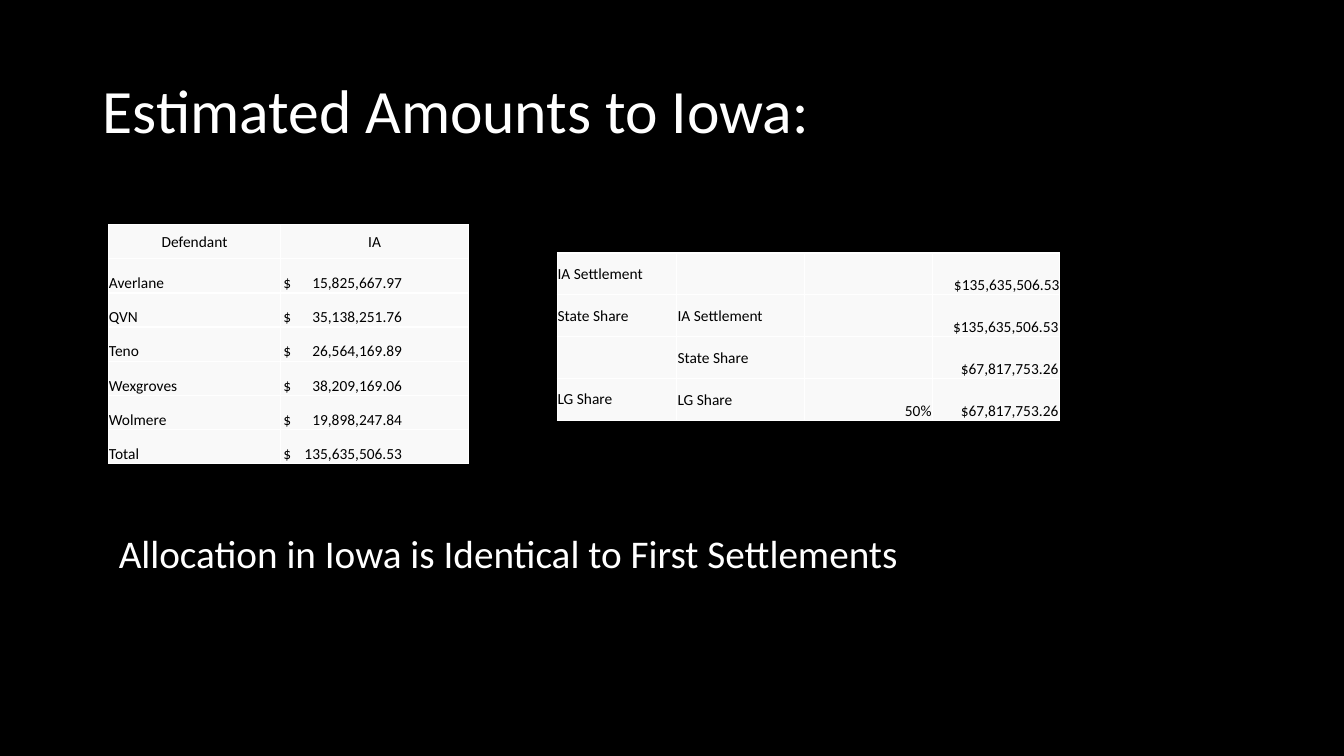
import pptx
import pptx.dml.color
import pptx.enum.text
import pptx.oxml
import pptx.oxml.ns
import pptx.util

Inches = pptx.util.Inches
ALIGN = pptx.enum.text.PP_ALIGN
ANCHOR = pptx.enum.text.MSO_ANCHOR
FONT, WHITE, BLACK, CELL = "Calibri", "FFFFFF", "000000", "F9F9F9"
NS = pptx.oxml.ns.nsdecls("a")

DEFENDANTS = [
    ("Defendant", "IA"),
    ("Averlane", "$\t15,825,667.97"),
    ("QVN", "$\t35,138,251.76"),
    ("Teno", "$\t26,564,169.89"),
    ("Wexgroves", "$\t38,209,169.06"),
    ("Wolmere", "$\t19,898,247.84"),
    ("Total", "$\t135,635,506.53"),
]
SHARES = [
    ("IA Settlement", "", "", "$135,635,506.53"),
    ("State Share", "IA Settlement", "", "$135,635,506.53"),
    ("", "State Share", "", "$67,817,753.26"),
    ("LG Share", "LG Share", "50%", "$67,817,753.26"),
]


def rgb(color):
    """Turn a hex string into a colour."""
    return pptx.dml.color.RGBColor.from_string(color)


def style_text(tf, size, color):
    """Format every run of a text frame."""
    for p in tf.paragraphs:
        for r in p.runs:
            r.font.name = FONT
            r.font.size = pptx.util.Pt(size)
            r.font.color.rgb = rgb(color)


def add_text(slide, box, text, size, anchor=ANCHOR.TOP, spacing=1.0):
    """Place one line of white text in a box."""
    tf = slide.shapes.add_textbox(*map(Inches, box)).text_frame
    tf.word_wrap = True
    tf.vertical_anchor = anchor
    tf.text = text
    tf.paragraphs[0].line_spacing = spacing
    style_text(tf, size, WHITE)


def add_borders(cell):
    """Draw thin white lines around a cell, ahead of its fill."""
    tc_pr = cell._tc.get_or_add_tcPr()
    for i, side in enumerate(("lnL", "lnR", "lnT", "lnB")):
        tc_pr.insert(i, pptx.oxml.parse_xml(
            f'<a:{side} {NS} w="12700"><a:solidFill><a:srgbClr val="{WHITE}"/>'
            f'</a:solidFill></a:{side}>'))


def add_grid(slide, box, widths, rows):
    """Fill a box with a plain table of equal rows and return the table."""
    left, top, width, height = map(Inches, box)
    table = slide.shapes.add_table(
        len(rows), len(widths), left, top, width, height).table
    table.first_row = table.horz_banding = False
    for column, w in zip(table.columns, widths):
        column.width = Inches(w)
    for i, row in enumerate(rows):
        for j, text in enumerate(row):
            cell = table.cell(i, j)
            cell.fill.solid()
            cell.fill.fore_color.rgb = rgb(CELL)
            cell.margin_left = cell.margin_right = 0
            cell.margin_top = cell.margin_bottom = 0
            add_borders(cell)
            cell.text_frame.text = text
            style_text(cell.text_frame, 11, BLACK)
    return table


def add_defendants(slide, box):
    """Place the table of amounts by defendant."""
    table = add_grid(slide, box, (1.7, 1.87), DEFENDANTS)
    for i in range(len(DEFENDANTS)):
        for j in range(2):
            cell = table.cell(i, j)
            cell.vertical_anchor = ANCHOR.BOTTOM if i else ANCHOR.MIDDLE
            p = cell.text_frame.paragraphs[0]
            if i == 0:
                p.alignment = ALIGN.CENTER
            elif j == 1:
                cell.margin_left = Inches(0.03)
                p._p.get_or_add_pPr().append(pptx.oxml.parse_xml(
                    f'<a:tabLst {NS}><a:tab pos="{Inches(1.18)}" algn="r"/></a:tabLst>'))


def add_shares(slide, box):
    """Place the table of state and local shares."""
    table = add_grid(slide, box, (1.18, 1.27, 1.27, 1.26), SHARES)
    for i in range(len(SHARES)):
        for j in range(4):
            cell = table.cell(i, j)
            cell.vertical_anchor = ANCHOR.MIDDLE if j < 2 else ANCHOR.BOTTOM
            cell.text_frame.paragraphs[0].alignment = ALIGN.LEFT if j < 2 else ALIGN.RIGHT
            if i and j:
                cell.margin_left = cell.margin_right = cell.margin_top = Inches(0.01)


def main():
    """Build the slide and save it."""
    prs = pptx.Presentation()
    prs.slide_width, prs.slide_height = Inches(13.33), Inches(7.5)
    slide = prs.slides.add_slide(prs.slide_layouts[6])
    slide.background.fill.solid()
    slide.background.fill.fore_color.rgb = rgb(BLACK)
    add_text(slide, (0.92, 0.4, 11.5, 1.45), "Estimated Amounts to Iowa:",
             44, ANCHOR.MIDDLE, 0.9)
    add_text(slide, (1.08, 5.2, 9.13, 0.57),
             "Allocation in Iowa is Identical to First Settlements", 28)
    add_defendants(slide, (1.08, 2.23, 3.57, 2.37))
    add_shares(slide, (5.53, 2.51, 4.98, 1.66))
    prs.save("out.pptx")


if __name__ == "__main__":
    main()
